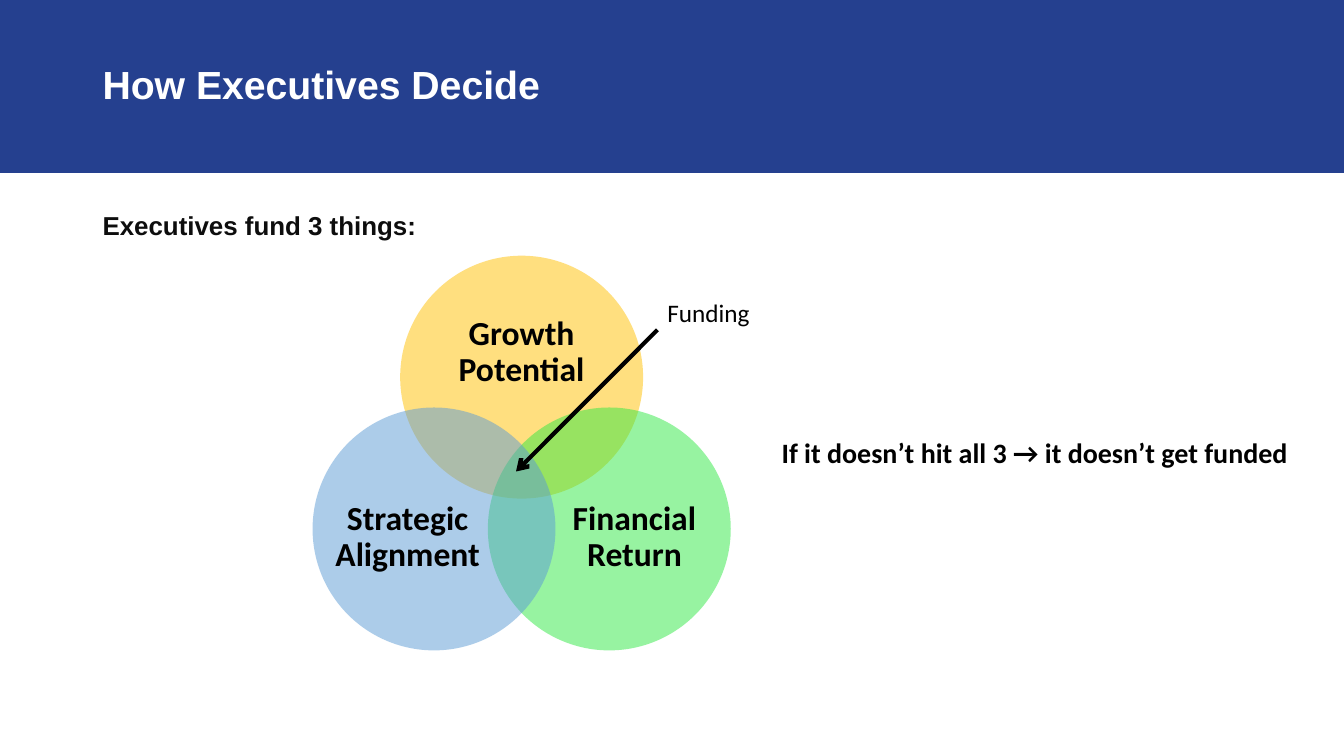
from lxml import etree
from pptx import Presentation
from pptx.dml.color import RGBColor
from pptx.enum.shapes import MSO_CONNECTOR, MSO_SHAPE
from pptx.enum.text import MSO_ANCHOR, PP_ALIGN
from pptx.oxml.ns import qn
from pptx.util import Pt

RECT, OVAL = MSO_SHAPE.RECTANGLE, MSO_SHAPE.OVAL
STRAIGHT = MSO_CONNECTOR.STRAIGHT
TOP, MIDDLE = MSO_ANCHOR.TOP, MSO_ANCHOR.MIDDLE
LEFT, CENTER = PP_ALIGN.LEFT, PP_ALIGN.CENTER

NAVY = RGBColor(0x25, 0x40, 0x8F)
WHITE = RGBColor(0xFF, 0xFF, 0xFF)
BLACK = RGBColor(0, 0, 0)
INK = RGBColor(0x0D, 0x0D, 0x0D)
AMBER = RGBColor(0xFF, 0xC0, 0x00)
GREEN = RGBColor(0x30, 0xE8, 0x45)
BLUE = RGBColor(0x5B, 0x9B, 0xD5)

# Content
TITLE = "How Executives Decide"
LEAD = "Executives fund 3 things:"
OVERLAP = "Funding"
TAKEAWAY = "If it doesn’t hit all 3 → it doesn’t get funded"
# label, colour, circle centre offset in steps, label box
CRITERIA = [
    ("Growth Potential", AMBER, (0, 0), (308.9, 213.1, 127.4, 77.8)),
    ("Financial Return", GREEN, (1, 1), (401, 336.2, 104.4, 95.8)),
    ("Strategic Alignment", BLUE, (-1, 1), (239, 336.2, 104.4, 95.8)),
]

# Layout
SLIDE_W, SLIDE_H = 960, 540
BAND_H = 123.6
MARGIN = 66.2
DIAMETER = 173.5
VENN_X, VENN_Y = 372.6, 269.4  # centre of the top circle
STEP_X, STEP_Y = 62.6, 108.4
ARROW = (469.6, 235.6, 368.6, 336.8)


def add_fill(kind, box, color, alpha=None):
    sp = slide.shapes.add_shape(kind, *map(Pt, box))
    sp.shadow.inherit = False
    sp.fill.solid()
    sp.fill.fore_color.rgb = color
    sp.line.fill.background()
    if alpha:
        clr = sp.fill._xPr.find(".//" + qn("a:srgbClr"))
        etree.SubElement(clr, qn("a:alpha"), val=str(alpha * 1000))


def add_text(text, box, size, color=BLACK, font="Calibri", bold=True,
             align=LEFT, anchor=TOP, spacing=1.0, inset=True):
    tf = slide.shapes.add_textbox(*map(Pt, box)).text_frame
    tf.word_wrap = True
    tf.vertical_anchor = anchor
    if not inset:
        tf.margin_left = tf.margin_right = tf.margin_top = tf.margin_bottom = 0
    p = tf.paragraphs[0]
    p.text = text
    p.alignment = align
    p.line_spacing = spacing
    p.font.name, p.font.size, p.font.bold = font, Pt(size), bold
    p.font.color.rgb = color


prs = Presentation()
prs.slide_width, prs.slide_height = Pt(SLIDE_W), Pt(SLIDE_H)
slide = prs.slides.add_slide(prs.slide_layouts[6])

# Title band
add_fill(RECT, (0, 0, SLIDE_W, BAND_H), NAVY)
add_text(TITLE, (MARGIN, 10, 828, 104.4), 28, WHITE, "Arial",
         anchor=MIDDLE, spacing=0.9)

# Overlapping circles with labels
for label, color, (dx, dy), box in CRITERIA:
    left = VENN_X + dx * STEP_X - DIAMETER / 2
    top = VENN_Y + dy * STEP_Y - DIAMETER / 2
    add_fill(OVAL, (left, top, DIAMETER, DIAMETER), color, alpha=50)
    add_text(label, box, 24, align=CENTER, anchor=MIDDLE, spacing=0.9, inset=False)

# Arrow to the shared centre
arrow = slide.shapes.add_connector(STRAIGHT, *map(Pt, ARROW))
arrow.line.color.rgb = BLACK
arrow.line.width = Pt(3)
etree.SubElement(arrow.line._get_or_add_ln(), qn("a:tailEnd"), type="arrow")
etree.SubElement(arrow._element.spPr, qn("a:effectLst"))
add_text(OVERLAP, (469.6, 209, 82, 29), 18, bold=False)

# Lead-in and takeaway
add_text(LEAD, (MARGIN, 149, 327, 29.5), 18.5, INK, "Arial", spacing=0.9)
add_text(TAKEAWAY, (551.2, 307.5, 376.6, 31.5), 20)

prs.save("out.pptx")
